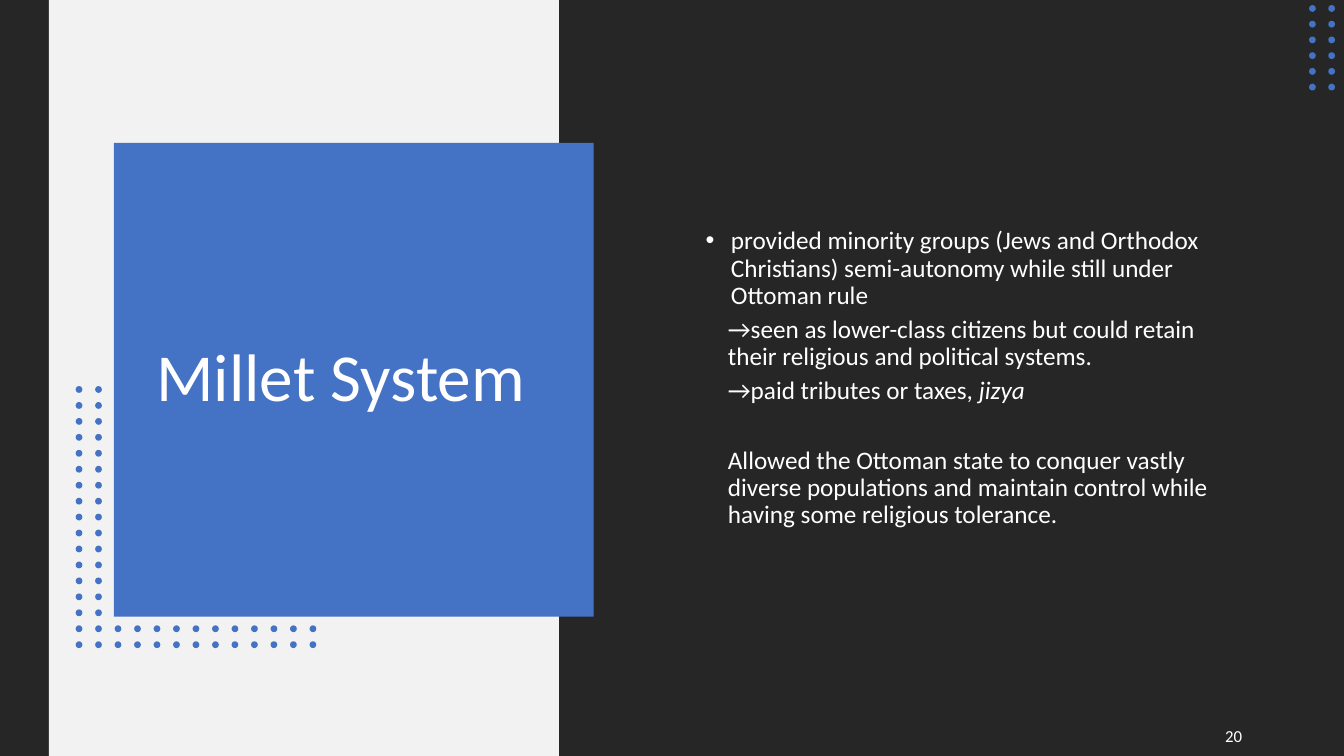
from pptx import Presentation
from pptx import util as u
from pptx.dml import color
from pptx.enum import shapes, text
from pptx.oxml import parse_xml
from pptx.oxml import ns

DARK, PALE, BLUE, WHITE = "262626", "F2F2F2", "4472C4", "FFFFFF"


def paint(fill, code):
    fill.solid()
    fill.fore_color.rgb = color.RGBColor.from_string(code)


class Deck:
    font = "Calibri"
    ink = WHITE

    def __init__(self, wide, high):
        self.prs = Presentation()
        self.prs.slide_width = u.Inches(wide)
        self.prs.slide_height = u.Inches(high)
        self.slide = self.prs.slides.add_slide(self.prs.slide_layouts[1])

    def box(self, x, y, w, h):
        wide, high = self.prs.slide_width, self.prs.slide_height
        return [round(side * part / 100)
                for side, part in ((wide, x), (high, y), (wide, w), (high, h))]

    def form(self, kind, code, area, home=None):
        item = (home or self.slide).shapes.add_shape(kind, *self.box(*area))
        item.shadow.inherit = False
        paint(item.fill, code)
        item.line.fill.background()

    def rect(self, code, *area):
        self.form(shapes.MSO_SHAPE.RECTANGLE, code, area)

    def dots(self, left, top, step, rise, counts):
        group = self.slide.shapes.add_group_shape()
        for row, count in enumerate(counts):
            for col in range(count):
                area = (left + col * step, top + row * rise, 0.5, 0.9)
                self.form(shapes.MSO_SHAPE.OVAL, BLUE, area, group)

    def frame(self, item, area):
        item.left, item.top, item.width, item.height = self.box(*area)
        self.slide.shapes.element.append(item.element)
        body = item.text_frame
        body.word_wrap = True
        body.auto_size = text.MSO_AUTO_SIZE.NONE
        body.vertical_anchor = text.MSO_ANCHOR.MIDDLE
        return body

    def run(self, para, words, size, slant=False):
        run = para.add_run()
        run.text = words
        run.font.name = self.font
        run.font.size = u.Pt(size)
        run.font.italic = slant
        paint(run.font.fill, self.ink)

    def title(self, words, *area):
        para = self.frame(self.slide.shapes.title, area).paragraphs[0]
        para.alignment = text.PP_ALIGN.LEFT
        para.line_spacing = 0.9
        self.run(para, words, 48)

    def list(self, items, *area):
        body = self.frame(self.slide.placeholders[1], area)
        for i, (level, gap, runs) in enumerate(items):
            para = body.add_paragraph() if i else body.paragraphs[0]
            para.level = level
            para.line_spacing = 0.9
            para.space_before = u.Pt(gap)
            props = para._p.get_or_add_pPr()
            left, hang = (0.22, 0) if level else (0.25, -0.25)
            props.set("marL", str(u.Inches(left)))
            props.set("indent", str(u.Inches(hang)))
            mark = "buNone" if level else 'buChar char="•"'
            props.append(parse_xml(f"<a:{mark} {ns.nsdecls('a')}/>"))
            for words, slant in runs:
                self.run(para, words, 18, slant)

    def note(self, words, *area):
        item = self.slide.shapes.add_textbox(*self.box(*area))
        para = self.frame(item, area).paragraphs[0]
        para.alignment = text.PP_ALIGN.RIGHT
        para.space_after = u.Pt(6)
        self.run(para, words, 12)


def main():
    deck = Deck(13.33, 7.5)
    deck.rect(DARK, 0, 0, 100, 100)
    deck.rect(PALE, 3.63, 0, 37.95, 100)
    deck.rect(BLUE, 8.48, 18.9, 35.7, 62.67)
    deck.title("Millet System", 10.88, 23.2, 30.75, 54)
    deck.dots(97.4, 0.67, 1.43, 2.08, [2] * 6)
    deck.dots(5.63, 51.07, 1.45, 2.11, [2] * 15 + [13] * 2)
    deck.list([
        (0, 10, [("provided minority groups (Jews and Orthodox Christians) "
                  "semi-autonomy while still under Ottoman rule", False)]),
        (1, 5, [("→seen as lower-class citizens but could retain their "
                 "religious and political systems.", False)]),
        (1, 5, [("→paid tributes or taxes,", False), (" jizya", True)]),
        (1, 30, [("Allowed the Ottoman state to conquer vastly diverse "
                  "populations and maintain control while having some "
                  "religious tolerance.", False)]),
    ], 51.76, 16.93, 41.04, 66.27)
    deck.note("20", 77.87, 94.67, 15.3, 5.33)
    deck.prs.save("out.pptx")


if __name__ == "__main__":
    main()
